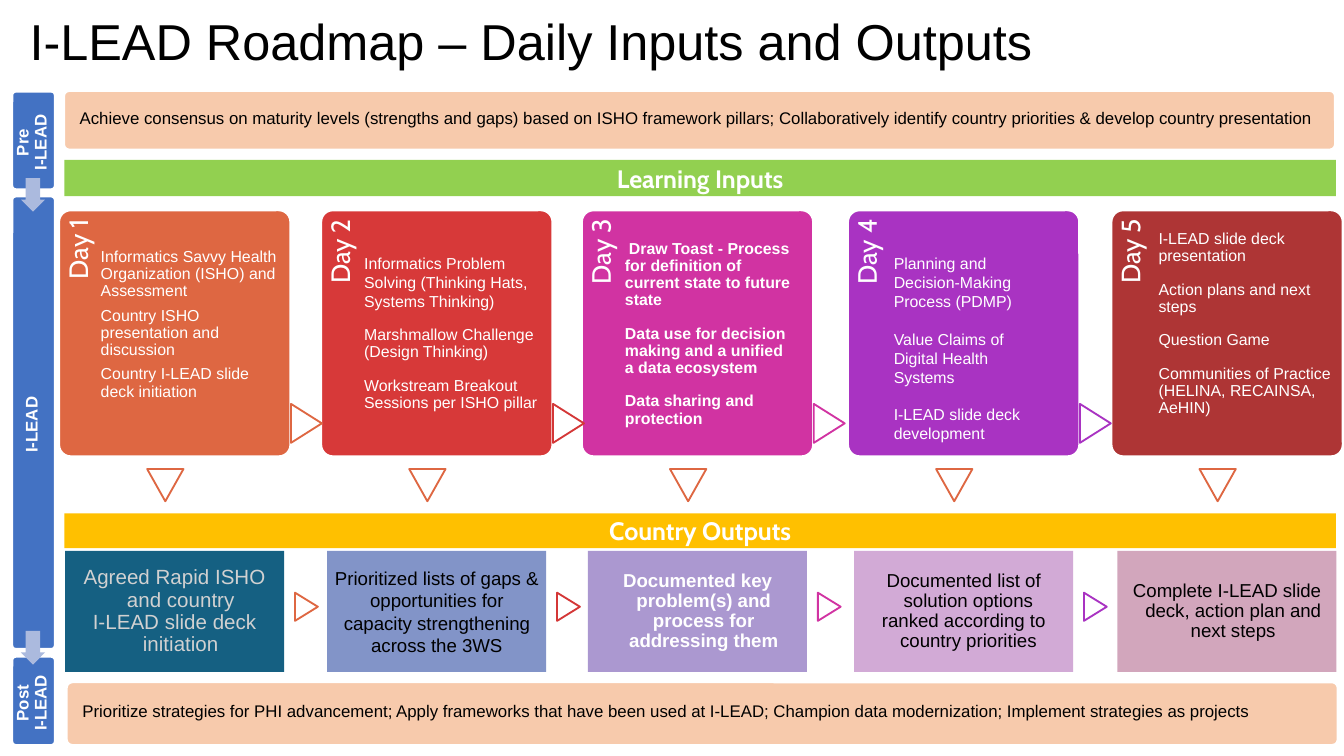
import pptx
import pptx.util
from pptx.dml.color import RGBColor
from pptx.enum.shapes import MSO_SHAPE
from pptx.enum.text import MSO_ANCHOR, PP_ALIGN

WIDTH, HEIGHT = 10, 5.625
CENTRES = [1.3, 3.25, 5.19, 7.17, 9.13]
COLUMN_WIDTH = 1.63
CARD_WIDTH, CARD_HEIGHT, CARD_MIDDLE = 1.72, 1.83, 2.48
OUTPUT_TOP, OUTPUT_HEIGHT = 4.1, 0.9
NEXT_OFFSET = 0.98

COLORS = {
    "white": "FFFFFF", "black": "000000", "grey": "D1D1D1",
    "rail": "4372C3", "rail_arrow": "ABBADE", "peach": "F7CAAC",
    "green": "92D050", "amber": "FFC000",
}
DAY_COLORS = ["DE6742", "D73939", "D133A2", "A933C2", "AE3535"]
NEXT_COLORS = ["DE6742", "D43737", "D133A2", "A933C2"]
OUTPUT_COLORS = ["156082", "8294C8", "AB98D0", "D2AAD6", "D2A6BC"]

# Text, box (left, top, width, height), line spacing, gap in points
DAYS = [
    (["Informatics Savvy Health Organization (ISHO) and Assessment",
      "Country ISHO presentation and discussion",
      "Country I-LEAD slide deck initiation"],
     (0.75, 1.52, 1.33, 1.75), 0.9, 3.9),
    (["Informatics Problem Solving (Thinking Hats, Systems Thinking)",
      "Marshmallow Challenge (Design Thinking)",
      "Workstream Breakout Sessions per ISHO pillar"],
     (2.71, 1.52, 1.3, 1.87), 0.9, 8.8),
    (["Draw Toast - Process for definition of current state to future state",
      "Data use for decision making and a unified a data ecosystem",
      "Data sharing and protection"],
     (4.65, 1.5, 1.25, 1.93), 0.9, 8.8),
    (["Planning and Decision-Making Process (PDMP)",
      "Value Claims of Digital Health Systems",
      "I-LEAD slide deck development"],
     (6.65, 1.85, 1.18, 1.5), 1, 9.8),
    (["I-LEAD slide deck presentation", "Action plans and next steps",
      "Question Game",
      "Communities of Practice (HELINA, RECAINSA, AeHIN)"],
     (8.62, 1.47, 1.31, 1.84), 0.9, 8.8),
]

# Text, size, colour, bold, hanging indent, line spacing
OUTPUTS = [
    (["Agreed Rapid ISHO and country", "I-LEAD slide deck initiation"],
     11, COLORS["grey"], False, 0.09, 0.9),
    (["Prioritized lists of gaps & opportunities for capacity "
      "strengthening across the 3WS"], 10, COLORS["black"], False, 0, 1),
    (["Documented key problem(s) and process for addressing them"],
     10, COLORS["white"], True, 0.09, 0.9),
    (["Documented list of solution options",
      "ranked according to country priorities"],
     10, COLORS["black"], False, 0.07, 0.9),
    (["Complete I-LEAD slide deck, action plan and next steps"],
     10, COLORS["black"], False, 0.09, 0.9),
]


def inches(values):
    return [pptx.util.Inches(value) for value in values]


def around(x, y, width, height):
    """Box given by its centre."""
    return x - width / 2, y - height / 2, width, height


def add_block(page, kind, box, fill, line=None, weight=1, rotation=0, adjust=()):
    shape = page.shapes.add_shape(kind, *inches(box))
    shape.shadow.inherit = False
    shape.rotation = rotation
    for index, value in enumerate(adjust):
        shape.adjustments[index] = value
    shape.fill.solid()
    shape.fill.fore_color.rgb = RGBColor.from_string(fill)
    if line:
        shape.line.color.rgb = RGBColor.from_string(line)
        shape.line.width = pptx.util.Pt(weight)
    else:
        shape.line.fill.background()
    return shape


def write(shape, lines, size, color, font="Arial", bold=False,
          align=PP_ALIGN.LEFT, anchor=MSO_ANCHOR.MIDDLE,
          insets=(0.05, 0.05, 0.05, 0.05), spacing=0.9, gap=0, hang=0):
    frame = shape.text_frame
    frame.word_wrap = True
    frame.vertical_anchor = anchor
    (frame.margin_left, frame.margin_top,
     frame.margin_right, frame.margin_bottom) = inches(insets)
    frame.text = "\n".join(lines)
    for index, para in enumerate(frame.paragraphs):
        para.alignment = align
        para.line_spacing = spacing
        if index and gap:
            para.space_before = pptx.util.Pt(gap)
        if hang:
            properties = para._p.get_or_add_pPr()
            properties.set("marL", str(pptx.util.Inches(hang)))
            properties.set("indent", str(-pptx.util.Inches(hang)))
        for span in para.runs:
            span.font.size = pptx.util.Pt(size)
            span.font.name = font
            span.font.bold = bold
            span.font.color.rgb = RGBColor.from_string(color)


def add_pointer(page, x, y, width, height, rotation, color):
    add_block(page, MSO_SHAPE.FLOWCHART_EXTRACT, around(x, y, width, height),
              COLORS["white"], color, rotation=rotation)


def add_title(page):
    box = page.shapes.add_textbox(*inches((0.15, 0.11, 8.92, 0.47)))
    write(box, ["I-LEAD Roadmap – Daily Inputs and Outputs"], 27,
          COLORS["black"], insets=(0.07, 0.04, 0.07, 0.04), spacing=0.8)


def add_heading(page, text, top, height, fill):
    bar = add_block(page, MSO_SHAPE.RECTANGLE, (0.48, top, 9.46, height), fill)
    write(bar, [text], 13.5, COLORS["white"], "Cabin", True, PP_ALIGN.CENTER,
          insets=(0.07, 0.04, 0.07, 0.04), spacing=1)


def add_banner(page, text, left, top, height):
    banner = add_block(page, MSO_SHAPE.ROUNDED_RECTANGLE,
                       (left, top, 9.47, height), COLORS["peach"],
                       COLORS["white"], 2, adjust=[0.1])
    write(banner, [text], 9, COLORS["black"], insets=(0.11, 0.06, 0.08, 0.08))


def add_day(page, number, centre, color, content):
    """Card turned on its side, so that its label reads upwards."""
    lines, box, spacing, gap = content
    card = add_block(page, MSO_SHAPE.ROUNDED_RECTANGLE,
                     around(centre, CARD_MIDDLE, CARD_HEIGHT, CARD_WIDTH),
                     color, COLORS["white"], rotation=270, adjust=[0.05])
    write(card, [f"Day {number}"], 14.2, COLORS["white"], "Cabin",
          align=PP_ALIGN.RIGHT, anchor=MSO_ANCHOR.TOP,
          insets=(0.37, 0.02, 0.04, 1.2))
    body = page.shapes.add_textbox(*inches(box))
    anchor = MSO_ANCHOR.TOP if number == 4 else MSO_ANCHOR.MIDDLE
    write(body, lines, 8.5, COLORS["white"], bold=number == 3, anchor=anchor,
          insets=(0, 0.04, 0, 0), spacing=spacing, gap=gap)
    first = body.text_frame.paragraphs[0]
    if number == 2:
        first.line_spacing = 1
    if number == 3:
        first._p.get_or_add_pPr().set("indent", str(pptx.util.Inches(0.03)))


def add_output(page, centre, fill, content):
    lines, size, color, bold, hang, spacing = content
    box = (centre - COLUMN_WIDTH / 2, OUTPUT_TOP, COLUMN_WIDTH, OUTPUT_HEIGHT)
    output = add_block(page, MSO_SHAPE.RECTANGLE, box, fill)
    write(output, lines, size, color, bold=bold, align=PP_ALIGN.CENTER,
          spacing=spacing, hang=hang)


def add_rail(page):
    stages = [(["Pre", "I-LEAD"], 1.045, 0.74), (["I-LEAD"], 3.145, 3.38),
              (["Post", "I-LEAD"], 5.215, 0.67)]
    for lines, middle, length in stages:
        stage = add_block(page, MSO_SHAPE.ROUNDED_RECTANGLE,
                          around(0.25, middle, length, 0.33), COLORS["rail"],
                          COLORS["white"], 2, 270, [0.1])
        write(stage, lines, 9, COLORS["white"], bold=True,
              align=PP_ALIGN.CENTER, insets=(0.02, 0, 0.05, 0.02))
    for middle in (1.45, 4.82):
        add_block(page, MSO_SHAPE.RIGHT_ARROW, around(0.245, middle, 0.25, 0.18),
                  COLORS["rail_arrow"], rotation=90, adjust=[0.6, 0.5])


def main():
    deck = pptx.Presentation()
    deck.slide_width, deck.slide_height = inches((WIDTH, HEIGHT))
    page = deck.slides.add_slide(deck.slide_layouts[6])

    add_title(page)
    add_banner(page, "Achieve consensus on maturity levels (strengths and gaps) "
               "based on ISHO framework pillars; Collaboratively identify country "
               "priorities & develop country presentation", 0.47, 0.67, 0.45)
    add_heading(page, "Learning Inputs", 1.19, 0.27, COLORS["green"])
    add_heading(page, "Country Outputs", 3.82, 0.26, COLORS["amber"])
    for index, centre in enumerate(CENTRES):
        add_day(page, index + 1, centre, DAY_COLORS[index], DAYS[index])
        add_output(page, centre, OUTPUT_COLORS[index], OUTPUTS[index])
        add_pointer(page, centre - 0.07, 3.61, 0.27, 0.24, 180, DAY_COLORS[0])
    for centre, color in zip(CENTRES, NEXT_COLORS):
        add_pointer(page, centre + NEXT_OFFSET, 3.15, 0.29, 0.23, 90, color)
        add_pointer(page, centre + NEXT_OFFSET, 4.515, 0.21, 0.17, 90, color)
    add_banner(page, "Prioritize strategies for PHI advancement; Apply frameworks "
               "that have been used at I-LEAD; Champion data modernization; "
               "Implement strategies as projects", 0.49, 5.07, 0.48)
    add_rail(page)
    deck.save("out.pptx")


if __name__ == "__main__":
    main()
